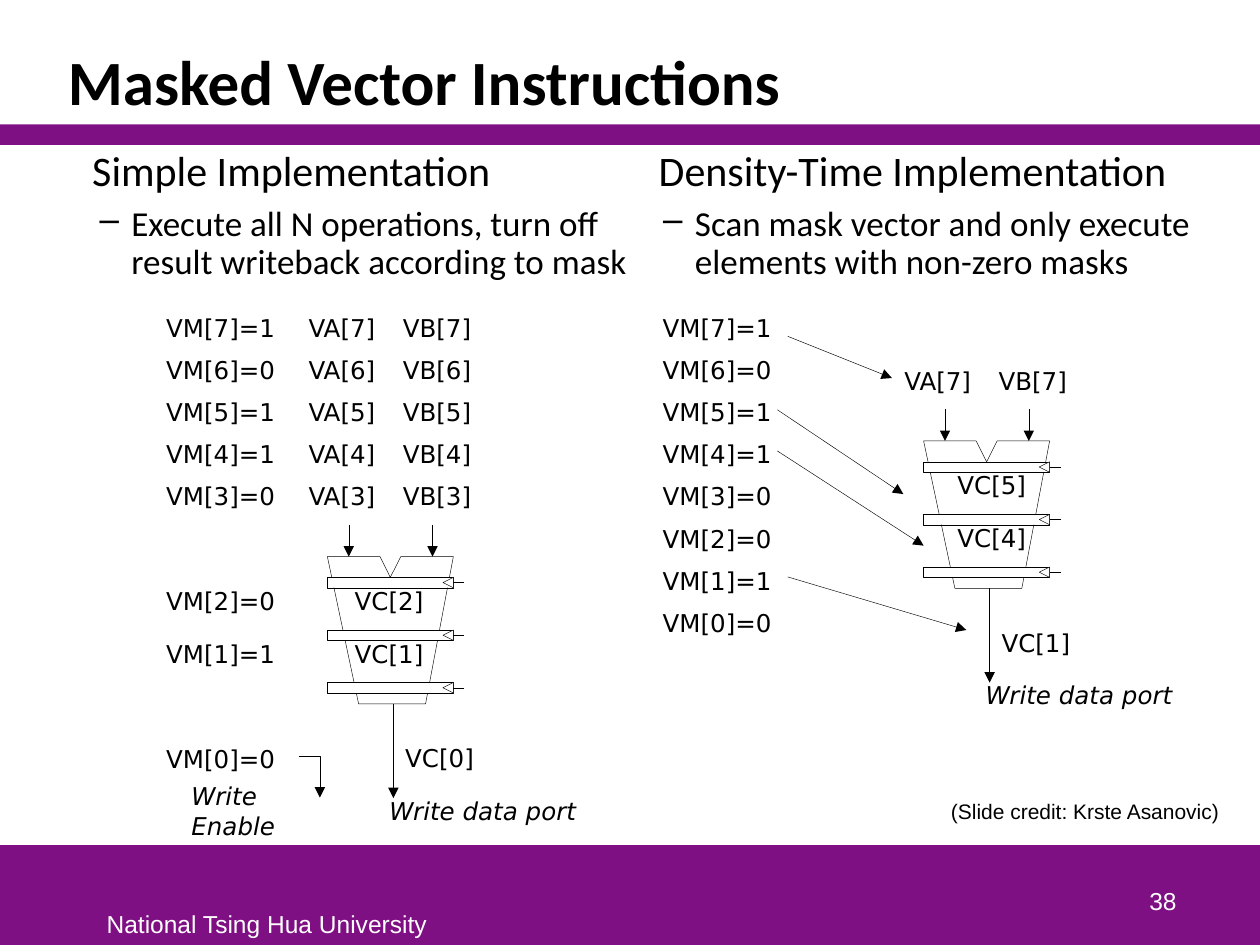
from dataclasses import dataclass

import pptx
import pptx.dml.color
import pptx.enum.shapes
import pptx.enum.text
import pptx.oxml.ns
import pptx.oxml.xmlchemy
import pptx.util
from pptx.util import Cm

ANCHOR = pptx.enum.text.MSO_ANCHOR
ALIGN = pptx.enum.text.PP_ALIGN
qn = pptx.oxml.ns.qn


@dataclass(frozen=True)
class Theme:
    purple: str = "7F1084"
    black: str = "000000"
    white: str = "FFFFFF"
    body_font: str = "Calibri"
    label_font: str = "DejaVu Sans"
    footer_font: str = "Arial"
    title_size: int = 36
    heading_size: int = 24
    body_size: int = 20
    label_size: int = 14
    credit_size: int = 12
    line_width: float = 0.25


@dataclass(frozen=True)
class Pipeline:
    """A vector unit; x and y mark the top left of its outline, in cm."""
    x: float
    y: float
    label_dx: float
    stages: tuple[str, str]
    output: str


@dataclass(frozen=True)
class Column:
    x: float
    width: float
    indent: float
    heading: str
    detail: str


T = Theme()
ROW_TOP, ROW_PITCH = 6.17, 0.85
MASK = {7: 1, 6: 0, 5: 1, 4: 1, 3: 0, 2: 0, 1: 1, 0: 0}

PIPELINES = (
    Pipeline(6.6, 11.22, 0.3, ("VC[2]", "VC[1]"), "VC[0]"),
    Pipeline(18.62, 8.89, 0.43, ("VC[5]", "VC[4]"), "VC[1]"),
)
COLUMNS = (
    Column(0.5, 13.15, 1.11, "Simple Implementation",
           "Execute all N operations, turn off result writeback according to mask"),
    Column(11.86, 13.13, 1.17, "Density-Time Implementation",
           "Scan mask vector and only execute elements with non-zero masks"),
)
# Arrows from each set mask bit to its place in the vector unit
MASK_ARROWS = (
    (15.88, 6.78, 17.98, 7.62),
    (15.67, 8.26, 18.21, 9.96),
    (15.67, 9.09, 18.62, 11.0),
    (15.88, 11.63, 19.48, 12.7),
)


def rgb(color: str) -> pptx.dml.color.RGBColor:
    return pptx.dml.color.RGBColor.from_string(color)


def format_runs(p, font: str, size: float, color: str = T.black,
                bold: bool = False, italic: bool = False) -> None:
    for r in p.runs:
        r.font.name, r.font.size = font, pptx.util.Pt(size)
        r.font.bold, r.font.italic = bold, italic
        r.font.color.rgb = rgb(color)


def add_text(s, x: float, y: float, w: float, h: float, text: str, font: str,
             size: float, color: str = T.black, anchor=ANCHOR.TOP,
             align=ALIGN.LEFT, wrap: bool = False, **style):
    tf = s.shapes.add_textbox(Cm(x), Cm(y), Cm(w), Cm(h)).text_frame
    tf.word_wrap, tf.vertical_anchor = wrap, anchor
    if not wrap:
        tf.auto_size = pptx.enum.text.MSO_AUTO_SIZE.SHAPE_TO_FIT_TEXT
    tf.text = text
    p = tf.paragraphs[0]
    p.alignment = align
    format_runs(p, font, size, color, **style)
    return tf


def add_label(s, x: float, y: float, w: float, text: str, italic: bool = False) -> None:
    add_text(s, x, y, w, 0.86, text, T.label_font, T.label_size,
             anchor=ANCHOR.MIDDLE, italic=italic)


def add_mask(s, x: float, y: float, i: int) -> None:
    add_label(s, x, y, 2.77, f"VM[{i}]={MASK[i]}")


def add_operands(s, x: float, y: float, i: int) -> None:
    for k, name in enumerate(("VA", "VB")):
        add_label(s, x + 1.9 * k, y, 1.97, f"{name}[{i}]")


def style_line(sp, arrow: bool = False) -> None:
    sp.line.color.rgb = rgb(T.black)
    sp.line.width = pptx.util.Pt(T.line_width)
    if arrow:
        ln = sp._element.spPr.find(qn("a:ln"))
        ln.append(ln.makeelement(qn("a:tailEnd"), {"type": "triangle"}))


def add_line(s, x1: float, y1: float, x2: float, y2: float, arrow: bool = False) -> None:
    sp = s.shapes.add_connector(pptx.enum.shapes.MSO_CONNECTOR.STRAIGHT,
                                Cm(x1), Cm(y1), Cm(x2), Cm(y2))
    style_line(sp, arrow)
    sp_pr = sp._element.spPr
    sp_pr.append(sp_pr.makeelement(qn("a:effectLst"), {}))


def add_rect(s, x: float, y: float, w: float, h: float, fill: str, outlined: bool = False) -> None:
    sp = s.shapes.add_shape(pptx.enum.shapes.MSO_SHAPE.RECTANGLE, Cm(x), Cm(y), Cm(w), Cm(h))
    sp.shadow.inherit = False
    sp.fill.solid()
    sp.fill.fore_color.rgb = rgb(fill)
    if outlined:
        style_line(sp)
    else:
        sp.line.fill.background()


def add_path(s, points: list[tuple[float, float]], fill: str = "",
             closed: bool = True, arrow: bool = False) -> None:
    start, *rest = [(Cm(x), Cm(y)) for x, y in points]
    fb = s.shapes.build_freeform(*start)
    fb.add_line_segments(rest, close=closed)
    sp = fb.convert_to_shape()
    sp.shadow.inherit = False
    if fill:
        sp.fill.solid()
        sp.fill.fore_color.rgb = rgb(fill)
    else:
        sp.fill.background()
    style_line(sp, arrow)


def add_pipeline(s, unit: Pipeline) -> None:
    x, y = unit.x, unit.y
    outline = ((0, 0), (0.63, 2.97), (1.98, 2.97), (2.54, 0), (1.48, 0), (1.27, 0.42), (1.06, 0))
    add_path(s, [(x + dx, y + dy) for dx, dy in outline])
    # Stage registers with clock marks
    for k in range(3):
        top = y + 0.42 + 1.06 * k
        mid, right = top + 0.105, x + 2.54
        add_rect(s, x, top, 2.54, 0.21, T.white, outlined=True)
        add_path(s, [(right, top + 0.21), (right - 0.21, mid), (right, top)], T.white)
        add_line(s, right, mid, right + 0.22, mid)
    # Inputs, stage results and output
    for dx in (0.43, 2.12):
        add_line(s, x + dx, y - 0.64, x + dx, y, arrow=True)
    for k, text in enumerate(unit.stages):
        add_label(s, x + unit.label_dx, y + 0.46 + 1.06 * k, 1.98, text)
    add_line(s, x + 1.33, y + 2.97, x + 1.33, y + 4.87, arrow=True)
    add_label(s, x + 1.32, y + 3.63, 1.98, unit.output)
    add_label(s, x + 1, y + 4.69, 4.29, "Write data port", italic=True)


def add_column(s, col: Column) -> None:
    tf = add_text(s, col.x, 2.87, col.width, 2.97, col.heading, T.body_font,
                  T.heading_size, anchor=ANCHOR.MIDDLE, wrap=True)
    p = tf.paragraphs[0]
    p.line_spacing = 0.9
    p._p.get_or_add_pPr().set("marL", str(Cm(col.indent)))
    p = tf.add_paragraph()
    p.text, p.level = col.detail, 1
    p_pr = p._p.get_or_add_pPr()
    p_pr.set("marL", str(Cm(1.9)))
    p_pr.set("indent", str(Cm(-0.64)))
    p_pr.append(p_pr.makeelement(qn("a:buChar"), {"char": "–"}))
    p.line_spacing, p.space_before = 0.9, pptx.util.Pt(6)
    format_runs(p, T.body_font, T.body_size)


def main() -> None:
    prs = pptx.Presentation()
    prs.slide_width, prs.slide_height = Cm(25.4), Cm(19.05)
    s = prs.slides.add_slide(prs.slide_layouts[6])

    # Bands, title and footer
    add_rect(s, 0, 17.04, 25.4, 2.01, T.purple)
    add_rect(s, 0, 2.51, 25.4, 0.41, T.purple)
    tf = add_text(s, 1.12, 0.64, 22.78, 1.88, "Masked Vector Instructions", T.body_font,
                  T.title_size, anchor=ANCHOR.BOTTOM, wrap=True, bold=True)
    tf.paragraphs[0].line_spacing = 0.85
    add_text(s, 1.9, 18.2, 7.01, 0.85, "National Tsing Hua University",
             T.footer_font, T.label_size, T.white)
    add_text(s, 18.69, 17.3, 5.28, 1.27, "38", T.footer_font, T.label_size, T.white,
             anchor=ANCHOR.BOTTOM, align=ALIGN.RIGHT, wrap=True)
    add_text(s, 18.92, 15.98, 5.97, 0.76, "(Slide credit: Krste Asanovic)",
             T.footer_font, T.credit_size)

    # Headings and vector units
    for col in COLUMNS:
        add_column(s, col)
    for unit in PIPELINES:
        add_pipeline(s, unit)

    # Simple implementation: waiting elements, then those inside the unit
    for k, i in enumerate(range(7, 2, -1)):
        y = ROW_TOP + ROW_PITCH * k
        add_mask(s, 3.1, y, i)
        add_operands(s, 5.97, y, i)
    for i, y in ((2, 11.68), (1, 12.75), (0, 14.86)):
        add_mask(s, 3.1, y, i)
    add_path(s, [(6.02, 15.24), (6.45, 15.24), (6.45, 16.08)], closed=False, arrow=True)
    add_label(s, 3.61, 15.91, 3.66, "Write Enable", italic=True)

    # Density-time implementation: full mask, set bits only
    for k, i in enumerate(MASK):
        add_mask(s, 13.11, ROW_TOP + ROW_PITCH * k, i)
    add_operands(s, 17.98, 7.24, 7)
    for ends in MASK_ARROWS:
        add_line(s, *ends, arrow=True)

    prs.save("out.pptx")


if __name__ == "__main__":
    main()
